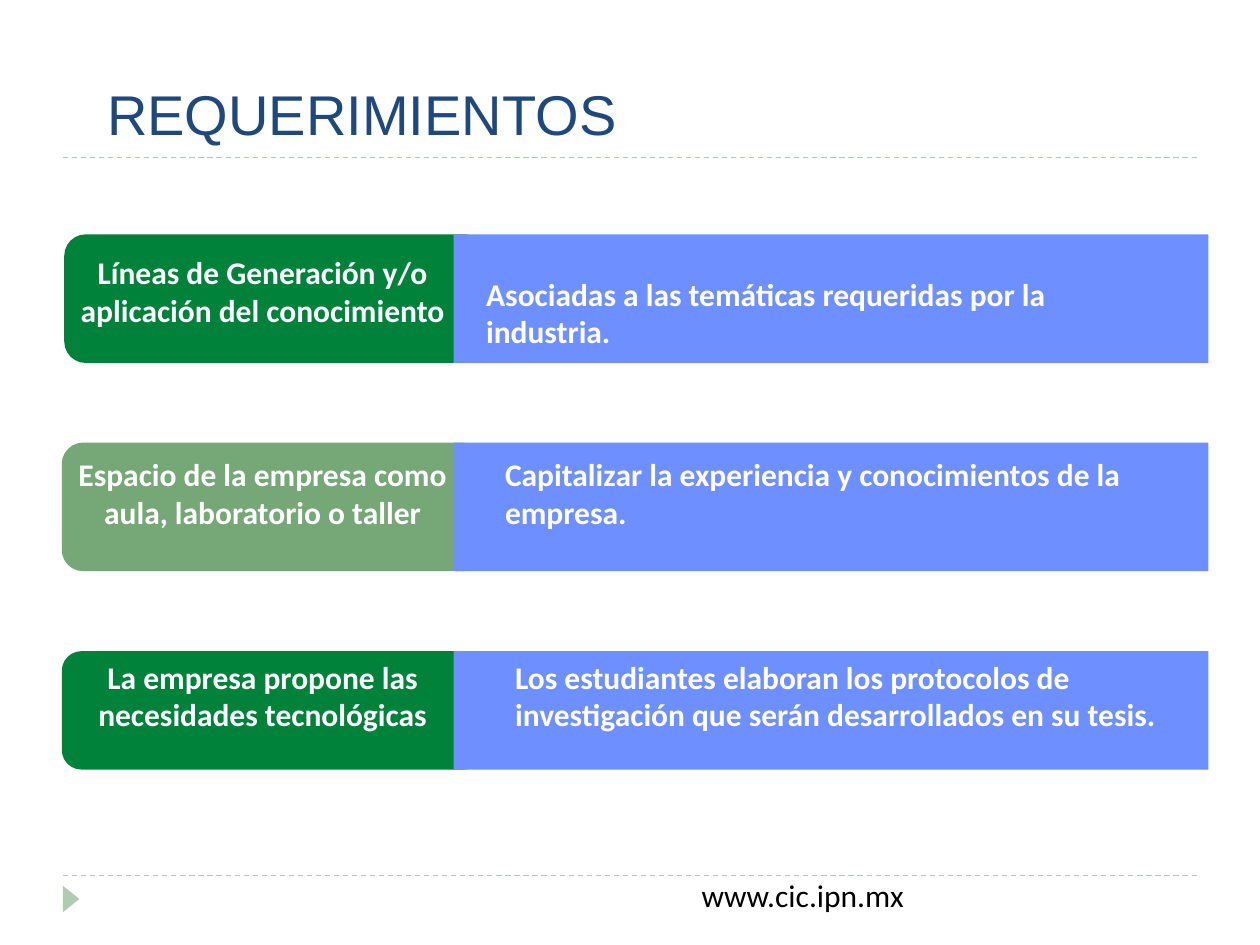
import pptx
import pptx.util
import pptx.dml.color
import pptx.enum.dml
import pptx.enum.shapes
import pptx.enum.text
import pptx.oxml.ns
import lxml.etree

Pt = pptx.util.Pt
SHAPES = pptx.enum.shapes.MSO_SHAPE
ALIGN = pptx.enum.text.PP_ALIGN

SAGE = "B0CCB0"
BLUE = "6E8FFF"
LABEL_FORMAT = {"name": "Calibri", "size": Pt(18), "bold": True}
FOOTER_FORMAT = {"name": "Calibri", "size": Pt(18)}
TITLE_FORMAT = {"name": "Arial", "size": Pt(32)}

# Band: top, height, left edge and colour; then each text with its left, top, width
REQUIREMENTS = [
    {"top": 133.9, "height": 73.5, "left": 36.7, "colour": "00823B",
     "topic": ("Líneas de Generación y/o aplicación del conocimiento", 29.5, 141.1, 241.2),
     "detail": ("Asociadas a las temáticas requeridas por la industria.", 270.7, 153.4, 409)},
    {"top": 252.9, "height": 73.5, "left": 35.3, "colour": "76A776",
     "topic": ("Espacio de la empresa como aula, laboratorio o taller", 29.5, 256.3, 241.2),
     "detail": ("Capitalizar la experiencia y conocimientos de la empresa.", 281.5, 256.3, 392.4)},
    {"top": 372.1, "height": 67.7, "left": 35.3, "colour": "00823B",
     "topic": ("La empresa propone las necesidades tecnológicas", 29.5, 372.2, 241.2),
     "detail": ("Los estudiantes elaboran los protocolos de investigación que serán "
                "desarrollados en su tesis.", 287.3, 372.2, 386.6)},
]


def rgb(value):
    return pptx.dml.color.RGBColor.from_string(value)


def write_text(frame, text, formats, colour, align=ALIGN.LEFT):
    para = frame.paragraphs[0]
    para.alignment = align
    span = para.add_run()
    span.text = text
    for name, value in formats.items():
        setattr(span.font, name, value)
    span.font.color.rgb = rgb(colour)


def add_block(page, kind, left, top, width, height, colour):
    block = page.shapes.add_shape(kind, Pt(left), Pt(top), Pt(width), Pt(height))
    block.shadow.inherit = False
    block.fill.solid()
    block.fill.fore_color.rgb = rgb(colour)
    block.line.fill.background()
    return block


def add_text(page, text, left, top, width, height, formats, colour,
             align=ALIGN.LEFT, wrap=True):
    box = page.shapes.add_textbox(Pt(left), Pt(top), Pt(width), Pt(height))
    box.text_frame.word_wrap = wrap
    write_text(box.text_frame, text, formats, colour, align)


def add_dashed_rule(page, top):
    rule = page.shapes.add_connector(
        pptx.enum.shapes.MSO_CONNECTOR.STRAIGHT, Pt(36), Pt(top), Pt(684), Pt(top))
    rule.line.color.rgb = rgb(SAGE)
    rule.line.width = Pt(0.75)
    rule.line.dash_style = pptx.enum.dml.MSO_LINE.DASH
    properties = rule.element.find(pptx.oxml.ns.qn("p:spPr"))
    lxml.etree.SubElement(properties, pptx.oxml.ns.qn("a:effectLst"))


def add_title(page, text):
    title = page.shapes.title
    title.left, title.top, title.width, title.height = Pt(54), Pt(9.4), Pt(590.4), Pt(77.8)
    title.text_frame.vertical_anchor = pptx.enum.text.MSO_ANCHOR.BOTTOM
    write_text(title.text_frame, text, TITLE_FORMAT, "1F497D")


def add_requirement(page, band):
    top, height = band["top"], band["height"]
    add_block(page, SHAPES.ROUNDED_RECTANGLE, band["left"], top, 241.2, height, band["colour"])
    add_block(page, SHAPES.RECTANGLE, 259.2, top, 431.3, height, BLUE)
    for part, align in (("topic", ALIGN.CENTER), ("detail", ALIGN.LEFT)):
        text, left, text_top, width = band[part]
        add_text(page, text, left, text_top, width, 51, LABEL_FORMAT, "FFFFFF", align)


def add_footer(page):
    marker = add_block(page, SHAPES.ISOSCELES_TRIANGLE, 33.1, 509, 15.1, 9.4, SAGE)
    marker.rotation = 90
    add_text(page, "www.cic.ipn.mx", 393.8, 496.8, 131, 28.8,
             FOOTER_FORMAT, "000000", wrap=False)


def main():
    deck = pptx.Presentation()
    deck.slide_width, deck.slide_height = Pt(720), Pt(540)
    page = deck.slides.add_slide(deck.slide_layouts.get_by_name("Title Only"))
    add_title(page, "REQUERIMIENTOS")
    for top in (500.4, 90):
        add_dashed_rule(page, top)
    add_footer(page)
    for band in REQUIREMENTS:
        add_requirement(page, band)
    deck.save("out.pptx")


if __name__ == "__main__":
    main()
